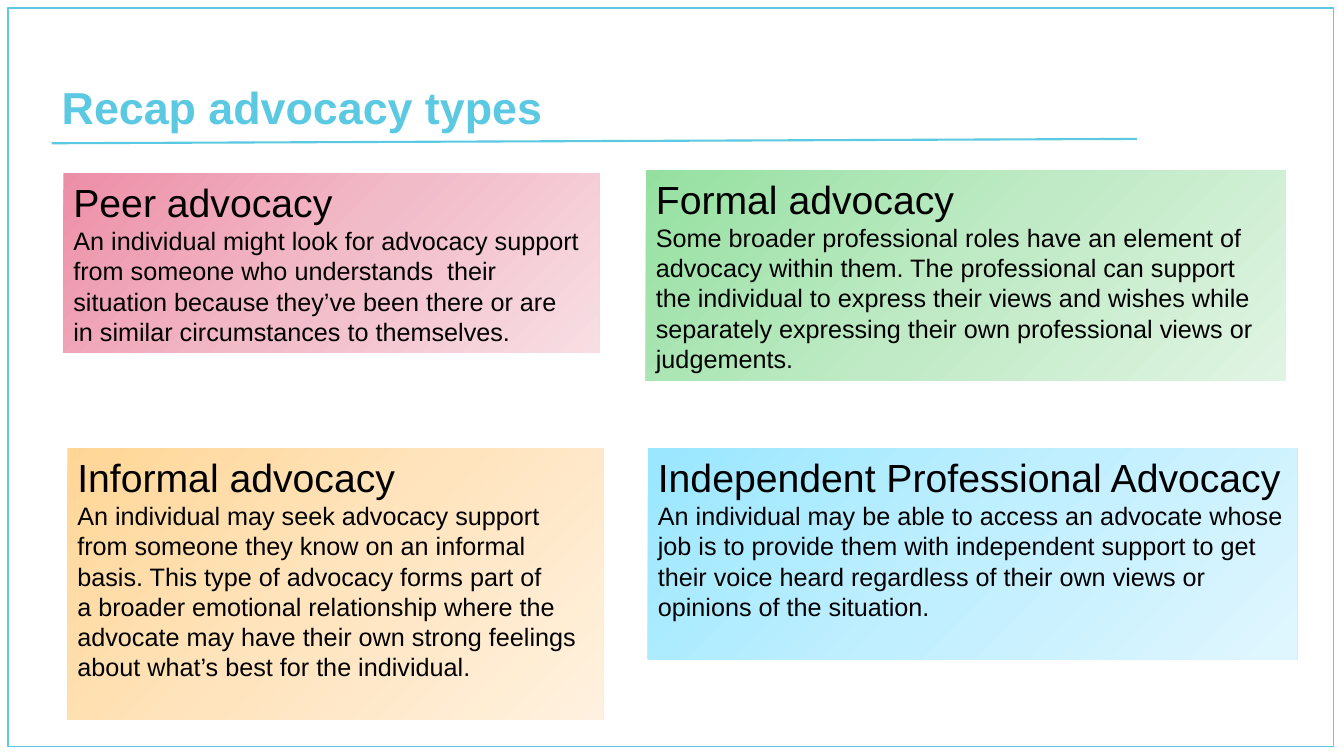
from copy import deepcopy
from dataclasses import dataclass

from lxml.etree import SubElement
from pptx import Presentation
from pptx.dml.color import RGBColor
from pptx.enum.shapes import MSO_CONNECTOR, MSO_SHAPE
from pptx.enum.text import MSO_ANCHOR, MSO_AUTO_SIZE, PP_ALIGN
from pptx.oxml.ns import qn
from pptx.slide import Slide
from pptx.text.text import _Paragraph as Paragraph
from pptx.util import Cm, Pt


@dataclass(frozen=True)
class Theme:
    font: str = "Arial"
    accent: str = "5CC9E3"
    text: str = "000000"
    pink: tuple[str, ...] = ("ED8EA7", "F2BBC8", "F8DEE4")
    green: tuple[str, ...] = ("95E0A0", "BFEAC5", "E0F4E3")
    orange: tuple[str, ...] = ("FFD696", "FFE4BE", "FFF1DF")
    blue: tuple[str, ...] = ("9AE7FF", "C0EFFF", "E0F6FE")
    title_size: int = 32
    heading_size: int = 28
    body_size: int = 18
    frame_width: float = 1
    rule_width: float = 1.5


@dataclass(frozen=True)
class AdvocacyCard:
    left: float
    top: float
    width: float
    height: float
    colours: tuple[str, ...]
    heading: str
    body: tuple[str, ...]


THEME = Theme()

CARDS = (
    AdvocacyCard(
        1.6, 4.37, 13.51, 4.52, THEME.pink, "Peer advocacy",
        ("An individual might look for advocacy support",
         "from someone who understands  their situation because they’ve "
         "been there or are\nin similar circumstances to themselves."),
    ),
    AdvocacyCard(
        16.28, 4.29, 16.13, 5.31, THEME.green, "Formal advocacy",
        ("Some broader professional roles have an element of advocacy within "
         "them. The professional can support the individual to express their "
         "views and wishes while separately expressing their own professional "
         "views or judgements.",),
    ),
    AdvocacyCard(
        1.7, 11.3, 13.51, 6.83, THEME.orange, "Informal advocacy",
        ("An individual may seek advocacy support from someone they know on an "
         "informal basis. This type of advocacy forms part of\na broader "
         "emotional relationship where the advocate may have their own strong "
         "feelings about what’s best for the individual.",),
    ),
    AdvocacyCard(
        16.33, 11.3, 16.36, 5.31, THEME.blue, "Independent Professional Advocacy",
        ("An individual may be able to access an advocate whose job is to "
         "provide them with independent support to get their voice heard "
         "regardless of their own views or opinions of the situation.",),
    ),
)


def write(paragraph: Paragraph, text: str, size: int, colour: str, bold: bool = False) -> None:
    paragraph.text = text
    paragraph.alignment = PP_ALIGN.LEFT
    for run in paragraph.runs:
        run.font.name = THEME.font
        run.font.size = Pt(size)
        run.font.bold = bold
        run.font.color.rgb = RGBColor.from_string(colour)


def draw_frame(slide: Slide) -> None:
    frame = slide.shapes.add_shape(
        MSO_SHAPE.RECTANGLE, Cm(0.2), Cm(0.2), Cm(33.4), Cm(18.62))
    frame.shadow.inherit = False
    frame.fill.background()
    frame.line.color.rgb = RGBColor.from_string(THEME.accent)
    frame.line.width = Pt(THEME.frame_width)


def draw_title_rule(slide: Slide) -> None:
    rule = slide.shapes.add_connector(
        MSO_CONNECTOR.STRAIGHT, Cm(1.3), Cm(3.61), Cm(28.65), Cm(3.5))
    rule.line.color.rgb = RGBColor.from_string(THEME.accent)
    rule.line.width = Pt(THEME.rule_width)
    SubElement(rule._element.spPr, qn("a:effectLst"))


def draw_title(slide: Slide, text: str) -> None:
    title = slide.shapes.title
    title.left, title.top, title.width, title.height = Cm(1.3), Cm(0.74), Cm(19.81), Cm(2.77)
    frame = title.text_frame
    frame.auto_size = MSO_AUTO_SIZE.NONE
    frame.vertical_anchor = MSO_ANCHOR.BOTTOM
    write(frame.paragraphs[0], text, THEME.title_size, THEME.accent, bold=True)
    frame.paragraphs[0].line_spacing = 0.9


def draw_card(slide: Slide, card: AdvocacyCard) -> None:
    shape = slide.shapes.add_textbox(
        Cm(card.left), Cm(card.top), Cm(card.width), Cm(card.height))
    shape.fill.gradient()
    shape.fill.gradient_angle = 315
    stop_list = shape._element.spPr.find(qn("a:gradFill")).find(qn("a:gsLst"))
    stop_list.append(deepcopy(stop_list[0]))
    for index, (stop, colour) in enumerate(zip(shape.fill.gradient_stops, card.colours)):
        stop.position = index / (len(card.colours) - 1)
        stop.color.rgb = RGBColor.from_string(colour)

    frame = shape.text_frame
    frame.word_wrap = True
    frame.auto_size = MSO_AUTO_SIZE.NONE
    frame.vertical_anchor = MSO_ANCHOR.TOP
    write(frame.paragraphs[0], card.heading, THEME.heading_size, THEME.text)
    for text in card.body:
        write(frame.add_paragraph(), text, THEME.body_size, THEME.text)


def main() -> None:
    presentation = Presentation()
    presentation.slide_width, presentation.slide_height = Cm(33.87), Cm(19.05)
    slide = presentation.slides.add_slide(presentation.slide_layouts.get_by_name("Title Only"))
    draw_title_rule(slide)
    draw_frame(slide)
    draw_title(slide, "Recap advocacy types")
    for card in CARDS:
        draw_card(slide, card)
    presentation.save("out.pptx")


if __name__ == "__main__":
    main()
